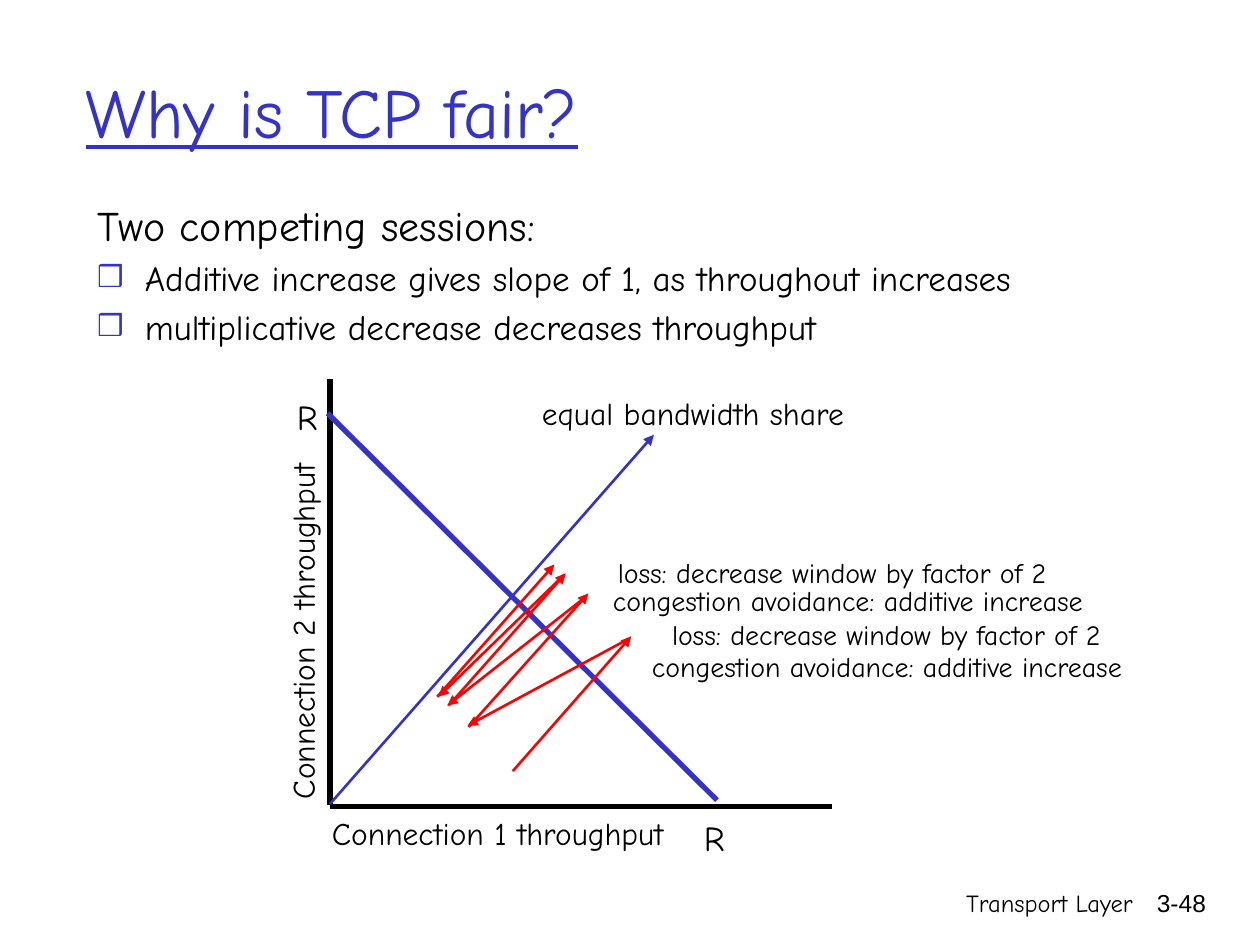
"""Build a slide explaining why TCP shares bandwidth fairly."""
from lxml import etree
from pptx import Presentation
from pptx.dml.color import RGBColor
from pptx.enum.shapes import MSO_CONNECTOR as Connector
from pptx.enum.text import MSO_ANCHOR as Anchor, MSO_AUTO_SIZE as AutoSize, PP_ALIGN as Align
from pptx.oxml.ns import qn
from pptx.util import Inches, Pt

COLORS = {"black": "000000", "blue": "3333CC", "red": "FF0000"}
FONT = "Comic Neue"


def write(paragraph, text, size, color="black", **extra):
    run = paragraph.add_run()
    run.text = text
    values = {"size": Pt(size), "name": FONT, "bold": False, **extra}
    for name, value in values.items():
        setattr(run.font, name, value)
    run.font.color.rgb = RGBColor.from_string(COLORS[color])


def draw_line(shapes, start, end, color, width, arrow=False):
    line = shapes.add_connector(Connector.STRAIGHT, *map(Inches, start + end))
    line.line.color.rgb = RGBColor.from_string(COLORS[color])
    line.line.width = Pt(width)
    properties = line.line._get_or_add_ln()
    if arrow:
        etree.SubElement(properties, qn("a:tailEnd"), type="triangle")
    etree.SubElement(properties.getparent(), qn("a:effectLst"))


presentation = Presentation()
presentation.slide_width, presentation.slide_height = Inches(10), Inches(7.5)
slide = presentation.slides.add_slide(presentation.slide_layouts[1])
shapes = slide.shapes

title, body = slide.placeholders
for placeholder, box, anchor in [
    (title, (0.58, 0.25, 8.5, 1.25), Anchor.MIDDLE),
    (body, (0.67, 1.53, 9.08, 5.08), Anchor.TOP),
]:
    for name, value in zip(("left", "top", "width", "height"), box):
        setattr(placeholder, name, Inches(value))
    frame = placeholder.text_frame
    frame.auto_size = AutoSize.NONE
    frame.vertical_anchor = anchor

heading = title.text_frame.paragraphs[0]
heading.alignment = Align.LEFT
write(heading, "Why is TCP fair?", 40, "blue", underline=True)

points = [
    ("Two competing sessions:", 24, False),
    ("Additive increase gives slope of 1, as throughout increases", 20, True),
    ("multiplicative decrease decreases throughput", 20, True),
]
for index, (text, size, bulleted) in enumerate(points):
    frame = body.text_frame
    paragraph = frame.add_paragraph() if index else frame.paragraphs[0]
    paragraph.space_before = Pt(size * 0.2)
    properties = paragraph._p.get_or_add_pPr()
    properties.set("marL", str(Inches(0.38)))
    properties.set("indent", str(Inches(-0.38)))
    if bulleted:
        bullet_color = etree.SubElement(properties, qn("a:buClr"))
        etree.SubElement(bullet_color, qn("a:srgbClr"), val=COLORS["blue"])
        etree.SubElement(properties, qn("a:buSzPct"), val="85000")
        etree.SubElement(properties, qn("a:buChar"), char="❒")
    else:
        etree.SubElement(properties, qn("a:buNone"))
    write(paragraph, text, size)

draw_line(shapes, (2.62, 6.4), (6.6, 6.4), "black", 3)
draw_line(shapes, (2.62, 6.39), (2.62, 3.01), "black", 3)
draw_line(shapes, (2.62, 6.38), (5.19, 3.45), "blue", 1.5, arrow=True)
draw_line(shapes, (2.6, 3.28), (5.69, 6.35), "blue", 3)

window_changes = [
    ((4.07, 6.12), (5.01, 5.05)),
    ((4.99, 5.07), (3.71, 5.76)),
    ((3.72, 5.77), (4.67, 4.71)),
    ((4.62, 4.76), (3.55, 5.6)),
    ((3.56, 5.6), (4.49, 4.55)),
    ((4.48, 4.56), (3.48, 5.53)),
    ((3.47, 5.53), (4.4, 4.48)),
]
for start, end in window_changes:
    draw_line(shapes, start, end, "red", 1.5, arrow=True)

increase = "congestion avoidance: additive increase"
loss = "loss: decrease window by factor of 2"
labels = [
    ("R", (2.22, 3.09, 0.44, 0.43), 20, Align.CENTER, 0, FONT),
    ("R", (5.45, 6.43, 0.44, 0.43), 20, Align.CENTER, 0, FONT),
    ("equal bandwidth share", (3.56, 3.08, 3.88, 0.4), 18, Align.CENTER, 0, FONT),
    ("Connection 1 throughput", (2.01, 6.41, 3.88, 0.4), 18, Align.CENTER, 0, FONT),
    ("Connection 2 throughput", (0.46, 4.81, 3.88, 0.4), 18, Align.CENTER, 270, FONT),
    (increase, (4.56, 5.11, 4.96, 0.37), 16, Align.CENTER, 0, FONT),
    (loss, (5.03, 4.85, 4.01, 0.37), 16, Align.CENTER, 0, FONT),
    (increase, (4.25, 4.58, 4.96, 0.37), 16, Align.CENTER, 0, FONT),
    (loss, (4.6, 4.36, 4.01, 0.37), 16, Align.CENTER, 0, FONT),
    ("Transport Layer", (5.92, 7, 3.17, 0.5), 14, Align.RIGHT, 0, FONT),
    ("3-48", (8.93, 7, 0.74, 0.5), 14, Align.RIGHT, 0, "Arial"),
]
for text, box, size, alignment, rotation, font in labels:
    label = shapes.add_textbox(*map(Inches, box))
    label.rotation = rotation
    label.text_frame.word_wrap = True
    paragraph = label.text_frame.paragraphs[0]
    paragraph.alignment = alignment
    write(paragraph, text, size, name=font)

presentation.save("out.pptx")
